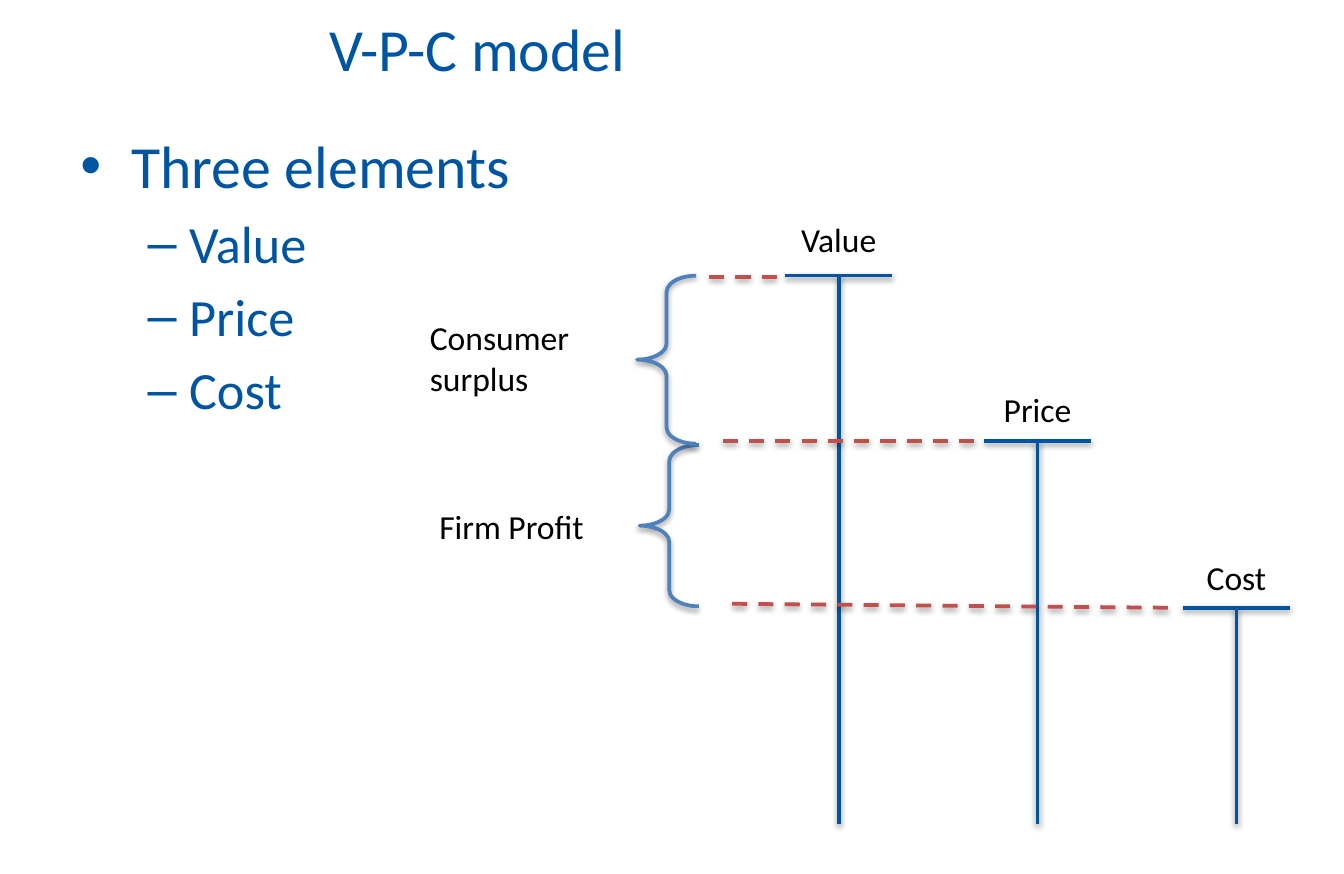
import pptx
import pptx.util
import pptx.dml.color
import pptx.enum.dml
import pptx.enum.shapes
import pptx.enum.text
import pptx.oxml
import pptx.oxml.ns
from pptx.util import Inches

COLORS = {"main": "0055A2", "dash": "C0504D", "brace": "4F81BD", "label": "000000"}
ALIGN = pptx.enum.text.PP_ALIGN
SHADOW = (
    '<a:effectLst %s><a:outerShdw blurRad="40000" dist="20000" dir="5400000" rotWithShape="0">'
    '<a:srgbClr val="000000"><a:alpha val="38000"/></a:srgbClr></a:outerShdw></a:effectLst>'
    % pptx.oxml.ns.nsdecls("a")
)


class SlideBuilder:
    """Holds the font and the current slide."""

    font = "Calibri"

    def __init__(self, prs):
        self.s = prs.slides.add_slide(prs.slide_layouts[5])

    def color(self, name):
        return pptx.dml.color.RGBColor.from_string(COLORS[name])

    def style_text(self, p, size, color, align=ALIGN.LEFT):
        p.alignment = align
        for r in p.runs:
            r.font.name = self.font
            r.font.size = pptx.util.Pt(size)
            r.font.color.rgb = self.color(color)

    def style_line(self, sp, color):
        """Give a shape or connector its outline and soft shadow."""
        sp.line.color.rgb = self.color(color)
        sp.line.width = pptx.util.Pt(2)
        sp._element.spPr.append(pptx.oxml.parse_xml(SHADOW))

    def title(self, text, x, y, w, h):
        sp = self.s.shapes.title
        sp.left, sp.top, sp.width, sp.height = map(Inches, (x, y, w, h))
        tf = sp.text_frame
        tf.text = text
        tf.vertical_anchor = pptx.enum.text.MSO_ANCHOR.MIDDLE
        self.style_text(tf.paragraphs[0], 32, "main")

    def bullets(self, items, x, y, w, h):
        """Add a list of (level, text) items."""
        looks = [("•", 32, 0.38, 0.38), ("–", 28, 0.81, 0.31)]
        tf = self.s.shapes.add_textbox(*map(Inches, (x, y, w, h))).text_frame
        tf.word_wrap = True
        tf.text = "\n".join(text for _, text in items)
        for i, (p, (level, _)) in enumerate(zip(tf.paragraphs, items)):
            mark, size, margin, hang = looks[level]
            p.level = level
            pPr = p._p.get_or_add_pPr()
            pPr.set("marL", str(Inches(margin)))
            pPr.set("indent", str(-Inches(hang)))
            pPr.append(pptx.oxml.parse_xml(
                '<a:buFont %s typeface="Arial"/>' % pptx.oxml.ns.nsdecls("a")))
            pPr.append(pptx.oxml.parse_xml(
                '<a:buChar %s char="%s"/>' % (pptx.oxml.ns.nsdecls("a"), mark)))
            if i:
                p.space_before = pptx.util.Pt(size * 0.2)
            self.style_text(p, size, "main")

    def label(self, text, x, y, w, h=0.4, align=ALIGN.LEFT):
        tf = self.s.shapes.add_textbox(*map(Inches, (x, y, w, h))).text_frame
        tf.word_wrap = False
        tf.auto_size = pptx.enum.text.MSO_AUTO_SIZE.SHAPE_TO_FIT_TEXT
        tf.text = text
        for p in tf.paragraphs:
            self.style_text(p, 18, "label", align)

    def line(self, x1, y1, x2, y2, color="main", dashed=False):
        c = self.s.shapes.add_connector(
            pptx.enum.shapes.MSO_CONNECTOR.STRAIGHT, *map(Inches, (x1, y1, x2, y2)))
        if dashed:
            c.line.dash_style = pptx.enum.dml.MSO_LINE.DASH
        self.style_line(c, color)

    def brace(self, x, y, w, h):
        sp = self.s.shapes.add_shape(
            pptx.enum.shapes.MSO_SHAPE.LEFT_BRACE, *map(Inches, (x, y, w, h)))
        sp.adjustments[0] = 0.274
        sp.fill.background()
        self.style_line(sp, "brace")


def main():
    prs = pptx.Presentation()
    prs.slide_width, prs.slide_height = Inches(10), Inches(6.5)
    b = SlideBuilder(prs)
    b.title("V-P-C model", 2.35, 0.07, 7.15, 0.57)
    b.bullets([(0, "Three elements"), (1, "Value"), (1, "Price"), (1, "Cost")],
              0.5, 0.91, 9, 4.9)

    # T-shaped bars share one base and stand at equal steps
    base, half_cap, step = 6.13, 0.4, 1.48
    bars = [("Value", 2.05, 1.58, 0.92), ("Price", 3.28, 2.84, 0.81), ("Cost", 4.52, 4.09, 0.75)]
    for i, (name, top, label_top, label_w) in enumerate(bars):
        x = 6.24 + i * step
        b.line(x - half_cap, top, x + half_cap, top)
        b.line(x, top, x, base)
        b.label(name, x - label_w / 2, label_top, label_w, align=ALIGN.CENTER)

    for guide in [(5.78, 2.06, 5.2, 2.06), (7.25, 3.28, 5.38, 3.28), (8.69, 4.52, 5.38, 4.49)]:
        b.line(*guide, color="dash", dashed=True)

    b.brace(4.76, 3.31, 0.44, 1.2)
    b.label("Firm Profit", 3.17, 3.71, 1.49)
    b.brace(4.74, 2.05, 0.44, 1.25)
    b.label("Consumer\nsurplus", 3.1, 2.31, 1.56, 0.71)
    prs.save("out.pptx")


if __name__ == "__main__":
    main()
